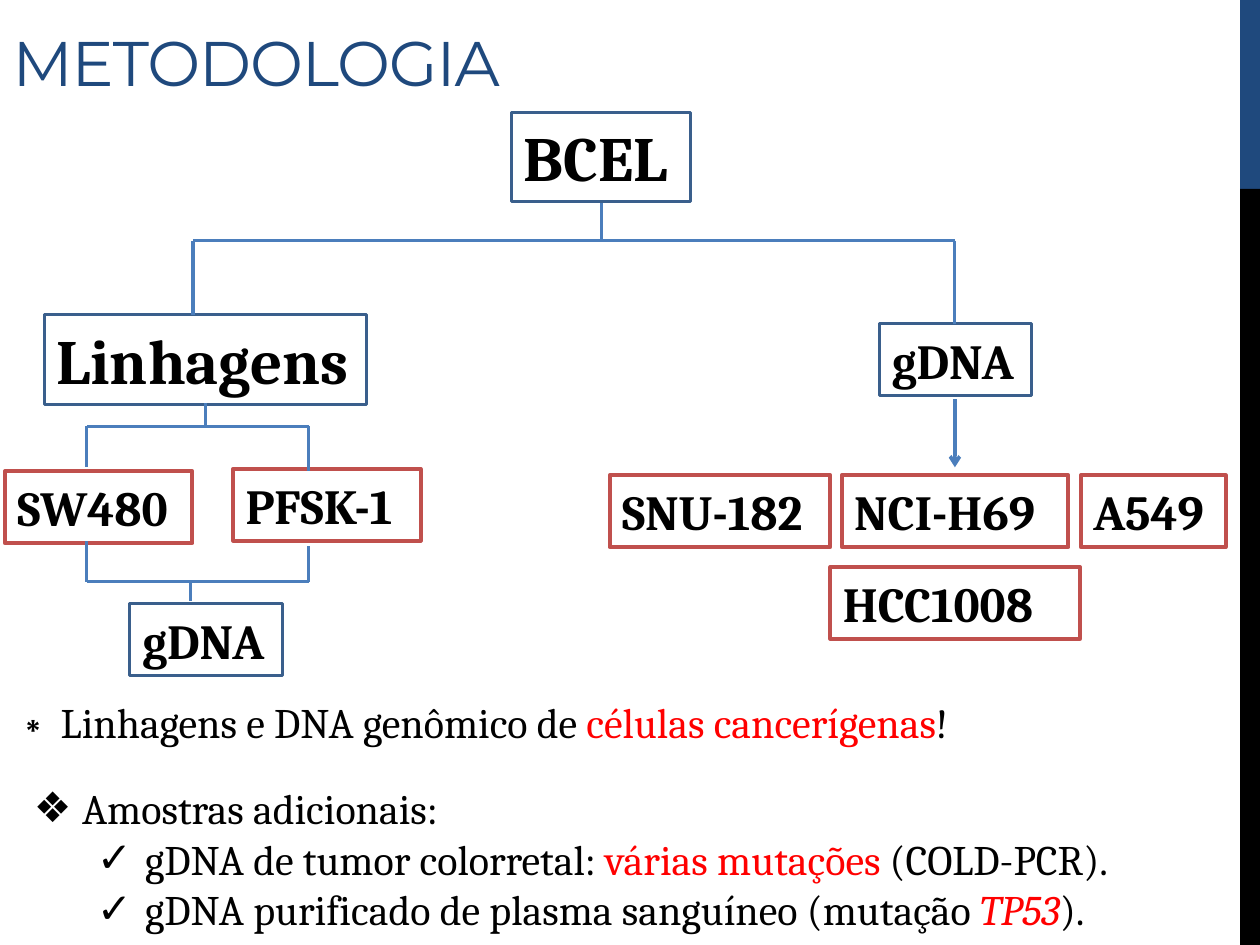
from lxml.etree import SubElement
from pptx import Presentation
from pptx.dml.color import RGBColor
from pptx.enum.shapes import MSO_CONNECTOR, MSO_SHAPE
from pptx.enum.text import MSO_ANCHOR, MSO_AUTO_SIZE, PP_ALIGN
from pptx.oxml.ns import qn
from pptx.util import Cm, Pt

NAVY = RGBColor(0x1F, 0x49, 0x7D)
BLACK = RGBColor(0, 0, 0)
WHITE = RGBColor(0xFF, 0xFF, 0xFF)
RED = RGBColor(0xFF, 0, 0)
LINK_BLUE = RGBColor(0x4B, 0x7E, 0xBC)
STEP_BLUE = RGBColor(0x3A, 0x5F, 0x8C)
CELL_RED = RGBColor(0xC0, 0x50, 0x4D)
SERIF = "Cambria"
INDENT = 0.97

STEPS = [
    ("BCEL", 10.31, 2.26, 3.61, 1.8, 36),
    ("Linhagens", 0.89, 6.35, 6.5, 1.8, 36),
    ("gDNA", 2.62, 12.17, 3.07, 1.45, 28),
    ("gDNA", 17.73, 6.53, 3.07, 1.45, 28),
]
CELLS = [
    ("SW480", 0.1, 9.5, 3.78),
    ("PFSK-1", 4.7, 9.45, 3.78),
    ("SNU-182", 12.29, 9.58, 4.45),
    ("NCI-H69", 16.97, 9.58, 4.57),
    ("A549", 21.79, 9.58, 2.92),
    ("HCC1008", 16.74, 11.43, 5.03),
]
NOTE = [
    (0, "∗", [("Linhagens e DNA genômico de ", BLACK, False),
              ("células cancerígenas", RED, False), ("!", BLACK, False)]),
]
SAMPLES = [
    (0, "❖", [("Amostras adicionais:", BLACK, False)]),
    (1, "✓", [("gDNA de tumor colorretal: ", BLACK, False),
              ("várias mutações ", RED, False), ("(COLD-PCR).", BLACK, False)]),
    (1, "✓", [("gDNA purificado de plasma sanguíneo (mutação ", BLACK, False),
              ("TP53", RED, True), (").", BLACK, False)]),
]


def place(shape, left, top, width, height):
    """Move and size a shape in centimetres."""
    shape.left, shape.top = Cm(left), Cm(top)
    shape.width, shape.height = Cm(width), Cm(height)


def add_span(para, text, font, size, color, bold=False, italic=False):
    """Append one formatted run and return it."""
    span = para.add_run()
    span.text = text
    span.font.name, span.font.size = font, Pt(size)
    span.font.color.rgb = color
    span.font.bold, span.font.italic = bold, italic
    return span


def add_band(page, top, height, color):
    """Draw one part of the right-hand side strip."""
    band = page.shapes.add_shape(
        MSO_SHAPE.RECTANGLE, Cm(25), Cm(top), Cm(0.4), Cm(height))
    band.shadow.inherit = False
    band.fill.solid()
    band.fill.fore_color.rgb = color
    band.line.fill.background()


def add_box(page, text, left, top, width, height, size, border, weight):
    """Draw a bordered diagram box with a bold label."""
    box = page.shapes.add_shape(
        MSO_SHAPE.RECTANGLE, Cm(left), Cm(top), Cm(width), Cm(height))
    box.shadow.inherit = False
    box.fill.solid()
    box.fill.fore_color.rgb = WHITE
    box.line.color.rgb = border
    box.line.width = Pt(weight)
    box.text_frame.word_wrap = True
    para = box.text_frame.paragraphs[0]
    para.alignment = PP_ALIGN.JUSTIFY
    add_span(para, text, SERIF, size, BLACK, bold=True)


def add_link(page, start, end, weight=1.75, arrow=False):
    """Draw a straight connector between two points."""
    link = page.shapes.add_connector(
        MSO_CONNECTOR.STRAIGHT, *(Cm(value) for value in start + end))
    link.line.color.rgb = LINK_BLUE
    link.line.width = Pt(weight)
    if arrow:
        SubElement(link.line._get_or_add_ln(), qn("a:tailEnd"), type="arrow")
    SubElement(link._element.spPr, qn("a:effectLst"))


def add_bracket(page, left, right, bar, left_end, right_end, stem, stem_end):
    """Draw a bar with a leg at each end and a stem on the other side."""
    add_link(page, (left, bar), (right, bar))
    for across, end in ((left, left_end), (right, right_end), (stem, stem_end)):
        add_link(page, (across, bar), (across, end))


def fill_title(title, text):
    """Format the title placeholder."""
    place(title, 0, 0.28, 24.89, 1.85)
    frame = title.text_frame
    frame.auto_size = MSO_AUTO_SIZE.NONE
    frame.vertical_anchor = MSO_ANCHOR.BOTTOM
    para = frame.paragraphs[0]
    para.alignment = PP_ALIGN.LEFT
    span = add_span(para, text, "Montserrat", 36, NAVY)
    span.font._element.set("spc", "-60")


def fill_list(body, items, align):
    """Fill a body placeholder with bulleted items."""
    frame = body.text_frame
    frame.auto_size = MSO_AUTO_SIZE.NONE
    frame.word_wrap = True
    for index, (level, mark, spans) in enumerate(items):
        para = frame.add_paragraph() if index else frame.paragraphs[0]
        para.level, para.alignment = level, align
        para.space_before = Pt(0)
        props = para._p.get_or_add_pPr()
        props.set("marL", str(Cm(INDENT + 1.27 * level)))
        props.set("indent", str(-Cm(INDENT)))
        SubElement(props, qn("a:buChar"), char=mark)
        for text, color, italic in spans:
            add_span(para, text, SERIF, 24, color, italic=italic)


def main():
    """Build the methodology slide."""
    deck = Presentation()
    deck.slide_width, deck.slide_height = Cm(25.4), Cm(19.05)
    page = deck.slides.add_slide(deck.slide_layouts[3])
    title, note, samples = page.placeholders

    add_band(page, 0, 3.81, NAVY)
    add_band(page, 3.81, 15.24, BLACK)
    fill_title(title, "METODOLOGIA")

    for text, left, top, width, height, size in STEPS:
        add_box(page, text, left, top, width, height, size, STEP_BLUE, 1.75)
    for text, left, top, width in CELLS:
        add_box(page, text, left, top, width, 1.45, 28, CELL_RED, 2.25)

    add_bracket(page, 3.89, 19.25, 4.85, 6.35, 6.53, 12.12, 4.09)
    add_bracket(page, 1.75, 6.22, 8.59, 9.42, 9.5, 4.14, 8.13)
    add_bracket(page, 1.75, 6.22, 11.73, 10.9, 11, 3.84, 12.12)
    add_link(page, (19.25, 8.05), (19.25, 9.42), weight=2, arrow=True)

    place(note, 0, 13.92, 24.59, 1.27)
    fill_list(note, NOTE, PP_ALIGN.LEFT)
    place(samples, 0.43, 15.65, 24.59, 3.33)
    fill_list(samples, SAMPLES, PP_ALIGN.JUSTIFY)

    deck.save("out.pptx")


if __name__ == "__main__":
    main()
